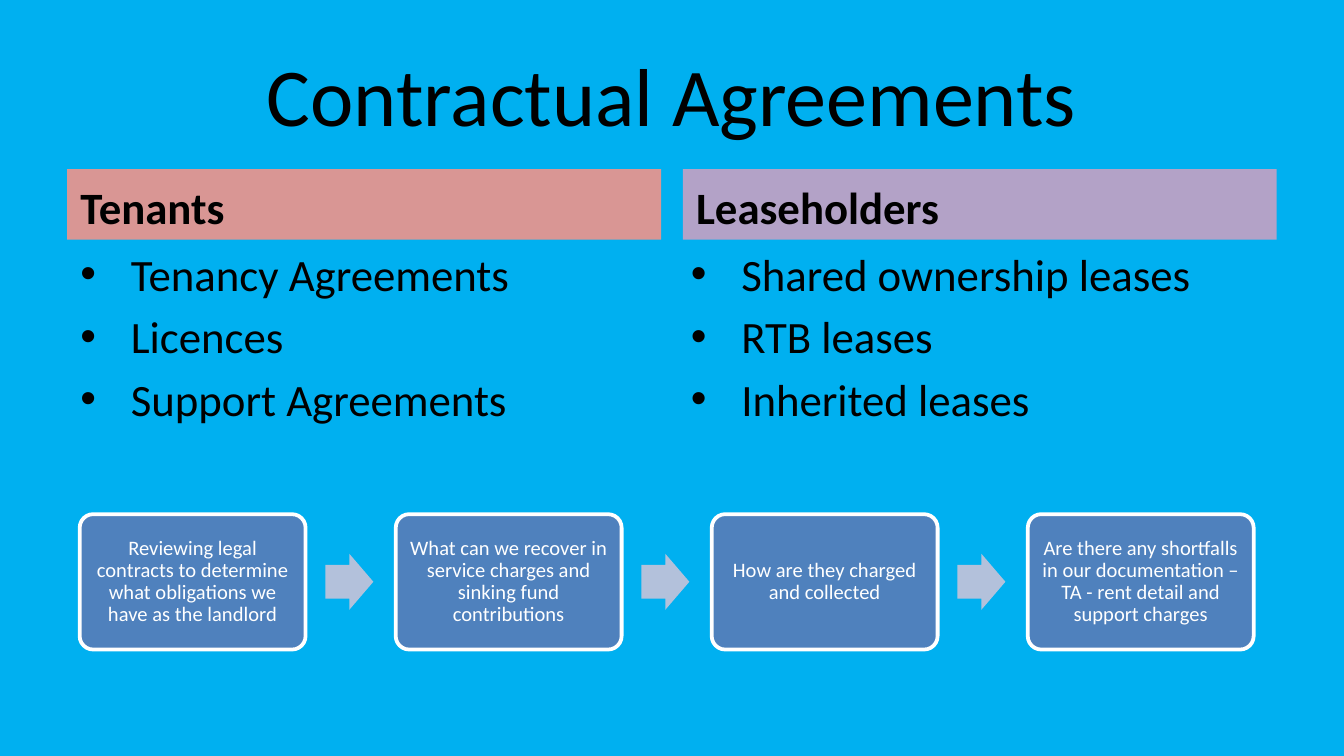
from lxml import etree
from pptx import Presentation
from pptx.dml.color import RGBColor
from pptx.enum.shapes import MSO_SHAPE as Kind
from pptx.enum.text import MSO_ANCHOR as Anchor, PP_ALIGN as Align
from pptx.oxml.ns import qn
from pptx.util import Pt

SKY = RGBColor(0x00, 0xB0, 0xF0)
ROSE = RGBColor(0xD9, 0x96, 0x94)
LILAC = RGBColor(0xB3, 0xA2, 0xC7)
BLUE = RGBColor(0x4F, 0x81, 0xBD)
PALE = RGBColor(0xB3, 0xC1, 0xDB)
BLACK = RGBColor(0, 0, 0)
WHITE = RGBColor(255, 255, 255)

deck = Presentation()
deck.slide_width, deck.slide_height = Pt(720), Pt(405)
slide = deck.slides.add_slide(deck.slide_layouts[6])
slide.background.fill.solid()
slide.background.fill.fore_color.rgb = SKY


def add_box(kind, left, top, width, height, fill=None):
    """Add a shape of one colour, or a text box when there is no fill."""
    area = Pt(left), Pt(top), Pt(width), Pt(height)
    if fill is None:
        box = slide.shapes.add_textbox(*area)
    else:
        box = slide.shapes.add_shape(kind, *area)
        box.shadow.inherit = False
        box.fill.solid()
        box.fill.fore_color.rgb = fill
        box.line.fill.background()
    box.text_frame.word_wrap = True
    return box


def write(box, lines, size, color, align, anchor, bold=False):
    """Fill a box with one paragraph per line and return the paragraphs."""
    frame = box.text_frame
    frame.vertical_anchor = anchor
    frame.text = "\n".join(lines)
    for para in frame.paragraphs:
        para.alignment = align
        font = para.font
        font.name, font.size, font.bold = "Calibri", Pt(size), bold
        font.color.rgb = color
    return frame.paragraphs


# Title
title = add_box(None, 36, 16.6, 648, 67.5)
write(title, ["Contractual Agreements"], 44, BLACK, Align.CENTER, Anchor.MIDDLE)

# Two columns: coloured heading above a bulleted list
columns = [
    (36, 36, ROSE, "Tenants",
     ["Tenancy Agreements", "Licences", "Support Agreements"]),
    (365.8, 363, LILAC, "Leaseholders",
     ["Shared ownership leases", "RTB leases", "Inherited leases"]),
]
for left, inner, fill, name, items in columns:
    head = add_box(Kind.RECTANGLE, left, 90.6, 318.2, 37.8, fill)
    write(head, [name], 24, BLACK, Align.LEFT, Anchor.BOTTOM, True)

    body = add_box(None, inner, 128.4, 318.2, 125)
    for para in write(body, items, 24, BLACK, Align.LEFT, Anchor.TOP):
        para.space_before = Pt(4.8)
        props = para._p.get_or_add_pPr()
        props.set("marL", str(Pt(27)))
        props.set("indent", str(-Pt(27)))
        font = etree.Element(qn("a:buFont"), typeface="Arial")
        mark = etree.Element(qn("a:buChar"), char="•")
        at = props.index(props.find(qn("a:defRPr")))
        props[at:at] = [font, mark]

# Process steps, with an arrow between neighbours
steps = [
    "Reviewing legal contracts to determine what obligations we have as the landlord",
    "What can we recover in service charges and sinking fund contributions",
    "How are they charged and collected",
    "Are there any shortfalls in our documentation – TA - rent detail and support charges",
]
PITCH = 169.3
for i, step in enumerate(steps):
    left = 42.7 + i * PITCH
    card = add_box(Kind.ROUNDED_RECTANGLE, left, 275.5, 121, 72.5, BLUE)
    card.adjustments[0] = 0.1
    card.line.color.rgb = WHITE
    card.line.width = Pt(2)
    frame = card.text_frame
    frame.margin_left = frame.margin_right = Pt(3.3)
    frame.margin_top = frame.margin_bottom = Pt(3.3)
    para = write(card, [step], 11, WHITE, Align.CENTER, Anchor.MIDDLE)[0]
    para.line_spacing = 0.9

    if i < len(steps) - 1:
        arrow = add_box(Kind.RIGHT_ARROW, left + 131.6, 296.7, 25.7, 30, PALE)
        arrow.adjustments[0] = 0.6
        arrow.adjustments[1] = 0.5

deck.save("out.pptx")
